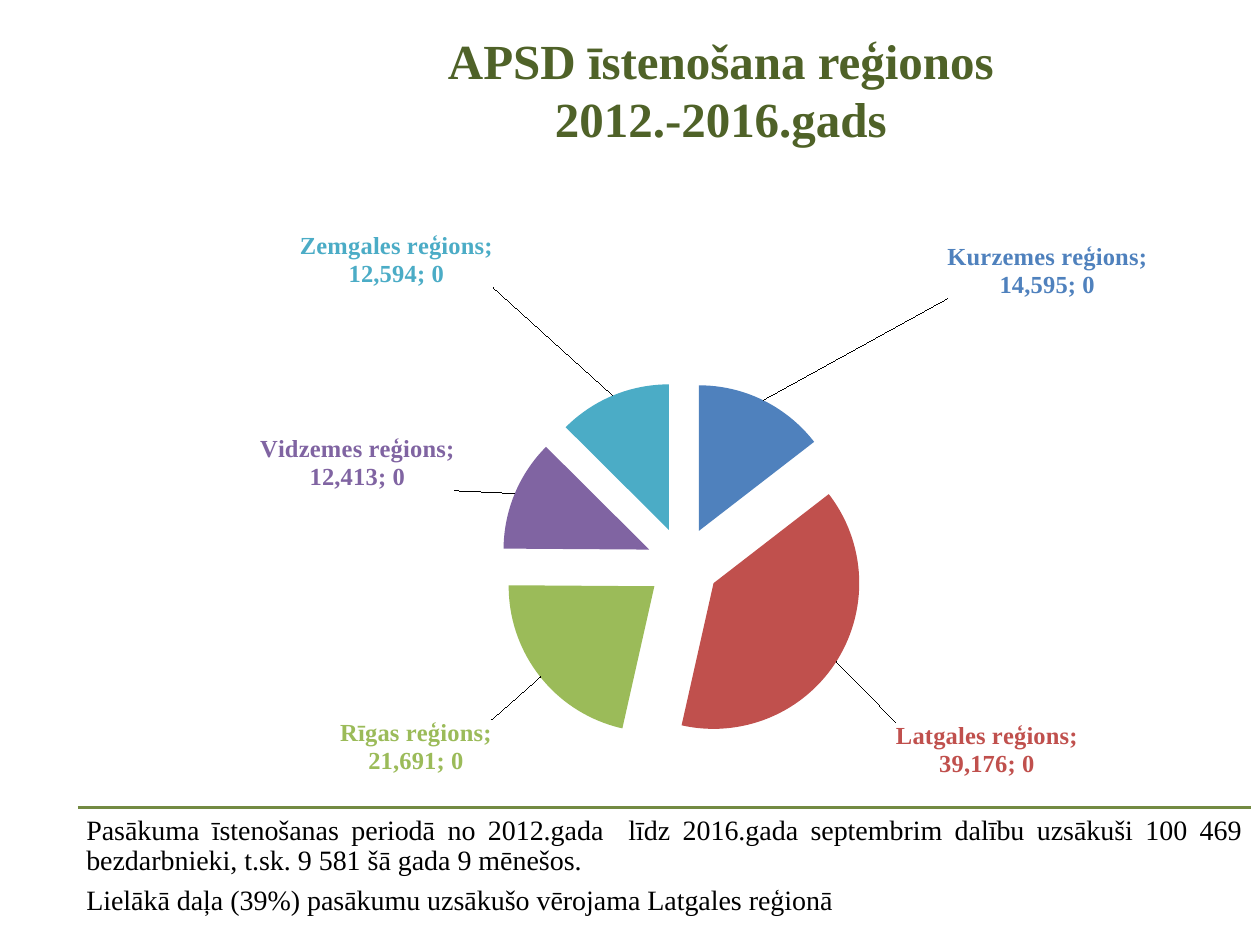
from dataclasses import dataclass

from lxml.etree import SubElement
from pptx import Presentation
from pptx.chart.data import CategoryChartData
from pptx.dml.color import RGBColor
from pptx.enum.chart import XL_CHART_TYPE as ChartType, XL_LABEL_POSITION as LabelPosition
from pptx.enum.shapes import MSO_CONNECTOR as Connector
from pptx.enum.text import MSO_ANCHOR as Anchor, MSO_AUTO_SIZE as AutoSize, PP_ALIGN as Align
from pptx.oxml import parse_xml
from pptx.oxml.ns import nsdecls, qn
from pptx.util import Cm, Pt

FONT = "Times New Roman"
NUMBER_FORMAT = "#,##0"
TITLE_GREEN, RULE_GREEN, BLACK = "4F6228", "738A42", "000000"


@dataclass
class Region:
    name: str
    participants: int
    color: str
    label_dx: float  # label shift, as a share of the chart's width
    label_dy: float  # label shift, as a share of the chart's height


REGIONS = [
    Region("Kurzemes reģions", 14595, "4F81BD", 0.17, -0.15),
    Region("Latgales reģions", 39176, "C0504D", 0.05, 0.09),
    Region("Rīgas reģions", 21691, "9BBB59", -0.04, 0.06),
    Region("Vidzemes reģions", 12413, "8064A2", -0.05, 0),
    Region("Zemgales reģions", 12594, "4BACC6", -0.11, -0.16),
]
SUMMARY = [
    "Pasākuma īstenošanas periodā no 2012.gada  līdz 2016.gada septembrim dalību "
    "uzsākuši 100 469 bezdarbnieki, t.sk. 9 581 šā gada 9 mēnešos. ",
    "Lielākā daļa (39%) pasākumu uzsākušo vērojama Latgales reģionā",
]


def rgb(color: str) -> RGBColor:
    return RGBColor.from_string(color)


def style_font(font, size: float, color: str, bold: bool = False) -> None:
    font.name, font.size, font.bold = FONT, Pt(size), bold
    font.color.rgb = rgb(color)


def manual_layout(**settings):
    """Return a c:layout element with the given manual settings."""
    layout = parse_xml(f"<c:layout {nsdecls('c')}><c:manualLayout/></c:layout>")
    for tag, value in settings.items():
        SubElement(layout[0], qn(f"c:{tag}")).set("val", str(value))
    return layout


def add_separator(labels_element) -> None:
    separator = parse_xml(f"<c:separator {nsdecls('c')}>; </c:separator>")
    labels_element.find(qn("c:showBubbleSize")).addnext(separator)


def add_title(slide) -> None:
    title = slide.shapes.title
    title.left, title.top, title.width, title.height = Cm(6.4), Cm(0.48), Cm(16.26), Cm(2.64)
    frame = title.text_frame
    frame.text = "APSD īstenošana reģionos\n2012.-2016.gads"
    frame.auto_size = AutoSize.NONE
    frame.vertical_anchor = Anchor.TOP
    for paragraph in frame.paragraphs:
        paragraph.alignment = Align.CENTER
        paragraph.space_before = Pt(0)
        for run in paragraph.runs:
            style_font(run.font, 28, TITLE_GREEN, bold=True)


def style_slice(series, index: int, region: Region) -> None:
    """Colour one slice and move its label away from the pie."""
    point = series.points[index]
    point.format.fill.solid()
    point.format.fill.fore_color.rgb = rgb(region.color)
    style_font(point.data_label.font, 14, region.color, bold=True)
    point.data_label.position = LabelPosition.OUTSIDE_END

    label = series._element.xpath(f"c:dLbls/c:dLbl[c:idx/@val='{index}']")[0]
    label.insert(1, manual_layout(x=region.label_dx, y=region.label_dy))
    text_properties = label.find(qn("c:txPr"))
    text_properties.find(qn("a:bodyPr")).set("wrap", "square")
    text_properties.addprevious(parse_xml(
        f'<c:numFmt {nsdecls("c")} formatCode="{NUMBER_FORMAT}" sourceLinked="0"/>'))
    for tag in ("showVal", "showCatName", "showPercent"):
        label.find(qn(f"c:{tag}")).set("val", "1")
    add_separator(label)


def add_region_chart(slide) -> None:
    data = CategoryChartData(number_format=NUMBER_FORMAT)
    data.categories = [region.name for region in REGIONS]
    data.add_series("Series 1", [region.participants for region in REGIONS])
    chart = slide.shapes.add_chart(
        ChartType.PIE, Cm(2.79), Cm(4.06), Cm(21.46), Cm(12.75), data).chart
    chart.has_title = chart.has_legend = False
    style_font(chart.font, 10, BLACK)
    chart.plots[0].vary_by_categories = True

    plot_area = chart._chartSpace.chart.plotArea
    for layout in plot_area.findall(qn("c:layout")):
        plot_area.remove(layout)
    plot_area.insert(0, manual_layout(layoutTarget="inner", xMode="edge", yMode="edge",
                                      x=0.212, y=0.285, w=0.599, h=0.576))

    series = chart.plots[0].series[0]
    labels = series.data_labels
    labels.show_value = labels.show_category_name = labels.show_percentage = True
    labels.number_format, labels.number_format_is_linked = NUMBER_FORMAT, False
    style_font(labels.font, 14, BLACK, bold=True)
    add_separator(labels._element)
    for index, region in enumerate(REGIONS):
        style_slice(series, index, region)
    series._element.find(qn("c:dPt")).addprevious(
        parse_xml(f'<c:explosion {nsdecls("c")} val="25"/>'))


def add_summary(slide) -> None:
    left, top, width = Cm(1.57), Cm(16.28), Cm(23.65)
    rule = slide.shapes.add_connector(Connector.STRAIGHT, left, top, left + width, top)
    rule.line.color.rgb = rgb(RULE_GREEN)
    rule.line.width = Pt(2)
    SubElement(rule._element.spPr, qn("a:effectLst"))

    frame = slide.shapes.add_textbox(left, top, width, Cm(2.7)).text_frame
    frame.word_wrap = True
    frame.margin_left = frame.margin_right = frame.margin_top = frame.margin_bottom = Cm(0.17)
    frame.text = "\n".join(SUMMARY)
    for paragraph in frame.paragraphs:
        paragraph.alignment = Align.JUSTIFY
        paragraph.line_spacing = 0.9
        paragraph.space_after = Pt(5.6)
        for run in paragraph.runs:
            style_font(run.font, 16, BLACK)


def main() -> None:
    presentation = Presentation()
    presentation.slide_width, presentation.slide_height = Cm(25.4), Cm(19.05)
    slide = presentation.slides.add_slide(presentation.slide_layouts.get_by_name("Title Only"))
    add_summary(slide)
    add_region_chart(slide)
    add_title(slide)
    presentation.save("out.pptx")


if __name__ == "__main__":
    main()
